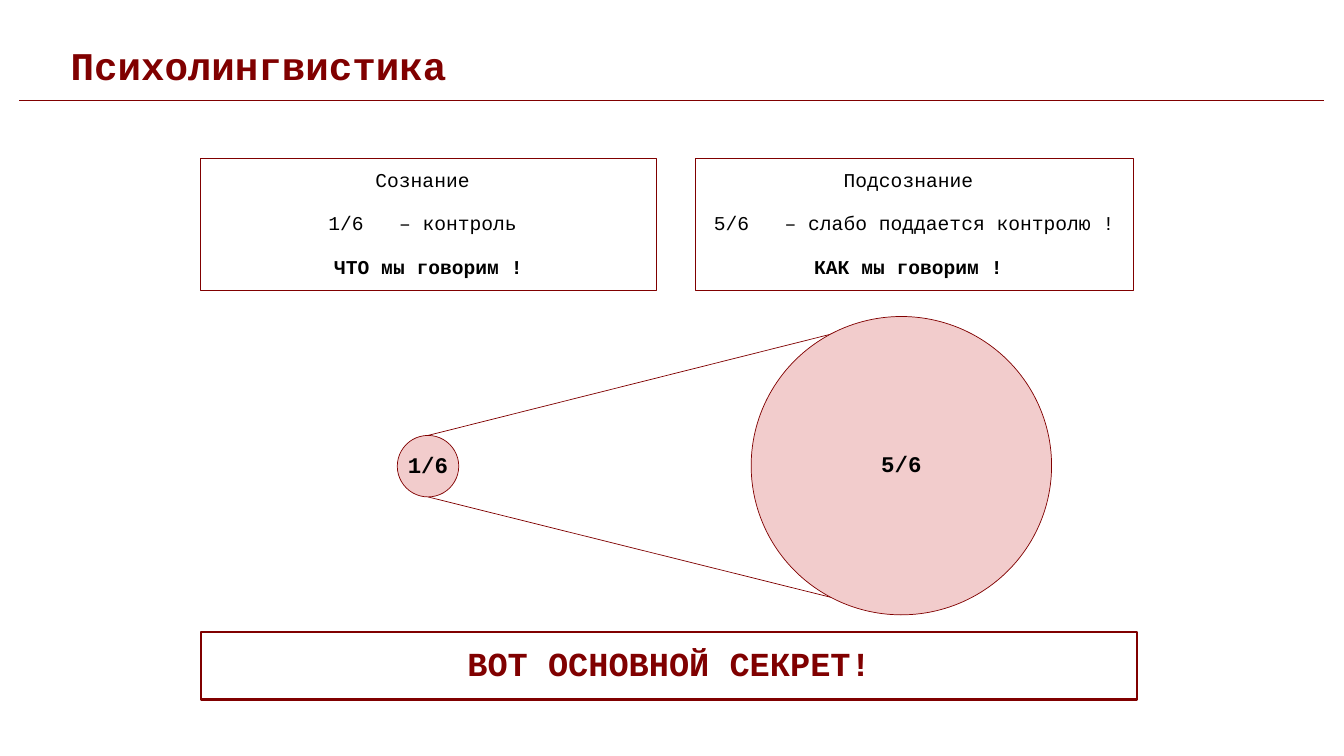
from dataclasses import dataclass

from lxml import etree
from pptx import Presentation
from pptx.dml.color import RGBColor
from pptx.enum.shapes import MSO_CONNECTOR, MSO_SHAPE
from pptx.enum.text import MSO_ANCHOR, PP_ALIGN
from pptx.oxml.ns import qn
from pptx.util import Inches, Pt

MAROON = RGBColor(0x80, 0x00, 0x00)
PINK = RGBColor(0xF2, 0xCC, 0xCC)
WHITE = RGBColor(0xFF, 0xFF, 0xFF)
BLACK = RGBColor(0x00, 0x00, 0x00)
FONT = "Courier New"
STRAIGHT = MSO_CONNECTOR.STRAIGHT
RECTANGLE, OVAL = MSO_SHAPE.RECTANGLE, MSO_SHAPE.OVAL
LEFT, CENTER = PP_ALIGN.LEFT, PP_ALIGN.CENTER
MIDDLE = MSO_ANCHOR.MIDDLE
TITLE_ONLY = 5
WIDE_GAP = 1680  # two extra characters at 14 pt, in hundredths of a point


@dataclass(frozen=True)
class Mind:
    """One part of the mind: its box and its circle."""
    name: str
    share: str
    control: str
    speech: str
    box_left: float
    box_width: float
    circle_left: float
    circle_top: float
    circle_width: float
    circle_height: float

    @property
    def center(self) -> float:
        return self.circle_left + self.circle_width / 2

    @property
    def bottom(self) -> float:
        return self.circle_top + self.circle_height


CONSCIOUS = Mind("Сознание ", "1/6", "– контроль ", "ЧТО мы говорим !",
                 1.99, 4.52, 3.94, 4.32, 0.61, 0.61)
SUBCONSCIOUS = Mind("Подсознание ", "5/6", "– слабо поддается контролю !",
                    "КАК мы говорим ! ", 6.9, 4.34, 7.45, 3.14, 2.98, 2.96)
MINDS = (CONSCIOUS, SUBCONSCIOUS)


def write(paragraph, text: str, *, size: float, color: RGBColor = BLACK,
          bold: bool = False, align=CENTER, before: float = 0,
          spacing: int = 0) -> None:
    """Add a formatted run to a paragraph."""
    paragraph.alignment = align
    paragraph.line_spacing = 0.9
    paragraph.space_before = Pt(before)
    run = paragraph.add_run()
    run.text = text
    font = run.font
    font.name, font.size, font.bold = FONT, Pt(size), bold
    font.color.rgb = color
    if spacing:
        run._r.get_or_add_rPr().set("spc", str(spacing))


def set_frame(frame, side: float, edge: float) -> None:
    frame.word_wrap = True
    frame.vertical_anchor = MIDDLE
    frame.margin_left = frame.margin_right = Inches(side)
    frame.margin_top = frame.margin_bottom = Inches(edge)


def add_outlined(slide, kind, left: float, top: float, width: float,
                 height: float, *, weight: float, fill: RGBColor | None = None):
    """Draw a maroon-edged shape and return its text frame."""
    shape = slide.shapes.add_shape(kind, Inches(left), Inches(top),
                                   Inches(width), Inches(height))
    shape.shadow.inherit = False
    if fill is None:
        shape.fill.background()
    else:
        shape.fill.solid()
        shape.fill.fore_color.rgb = fill
    shape.line.color.rgb = MAROON
    shape.line.width = Pt(weight)
    set_frame(shape.text_frame, 0.02, 0.02)
    return shape.text_frame


def add_line(slide, x1: float, y1: float, x2: float, y2: float) -> None:
    line = slide.shapes.add_connector(STRAIGHT, Inches(x1), Inches(y1),
                                      Inches(x2), Inches(y2))
    line.line.color.rgb = MAROON
    line.line.width = Pt(0.5)
    etree.SubElement(line._element.spPr, qn("a:effectLst"))


def add_circle(slide, mind: Mind) -> None:
    frame = add_outlined(slide, OVAL, mind.circle_left, mind.circle_top,
                         mind.circle_width, mind.circle_height,
                         weight=0.5, fill=PINK)
    frame.word_wrap = False
    write(frame.paragraphs[0], mind.share, size=16, bold=True)


def add_box(slide, mind: Mind) -> None:
    frame = add_outlined(slide, RECTANGLE, mind.box_left, 1.57,
                         mind.box_width, 1.31, weight=1, fill=WHITE)
    write(frame.paragraphs[0], mind.name, size=14)
    control = frame.add_paragraph()
    write(control, mind.share, size=14, before=16)
    write(control, " ", size=14, before=16, spacing=WIDE_GAP)
    write(control, mind.control, size=14, before=16)
    write(frame.add_paragraph(), mind.speech, size=14, bold=True, before=16)


def main() -> None:
    deck = Presentation()
    deck.slide_width, deck.slide_height = Inches(13.33), Inches(7.5)
    slide = deck.slides.add_slide(deck.slide_layouts[TITLE_ONLY])

    # Heading and its rule
    title = slide.shapes.title
    title.left, title.top = Inches(0.64), Inches(0.44)
    title.width, title.height = Inches(12.44), Inches(0.47)
    set_frame(title.text_frame, 0.06, 0.03)
    write(title.text_frame.paragraphs[0], "Психолингвистика", size=28,
          color=MAROON, bold=True, align=LEFT)
    add_line(slide, 0.19, 1, 13.13, 1)

    # Conclusion
    secret = add_outlined(slide, RECTANGLE, 1.99, 6.27, 9.29, 0.67, weight=1.5)
    write(secret.paragraphs[0], "ВОТ ОСНОВНОЙ СЕКРЕТ!", size=24,
          color=MAROON, bold=True)

    # Cone between the circles, behind them
    for start, end in ((CONSCIOUS.bottom, SUBCONSCIOUS.bottom),
                       (CONSCIOUS.circle_top, SUBCONSCIOUS.circle_top)):
        add_line(slide, CONSCIOUS.center, start, SUBCONSCIOUS.center, end)

    # Circles and boxes
    for mind in MINDS:
        add_circle(slide, mind)
    for mind in MINDS:
        add_box(slide, mind)

    deck.save("out.pptx")


if __name__ == "__main__":
    main()
